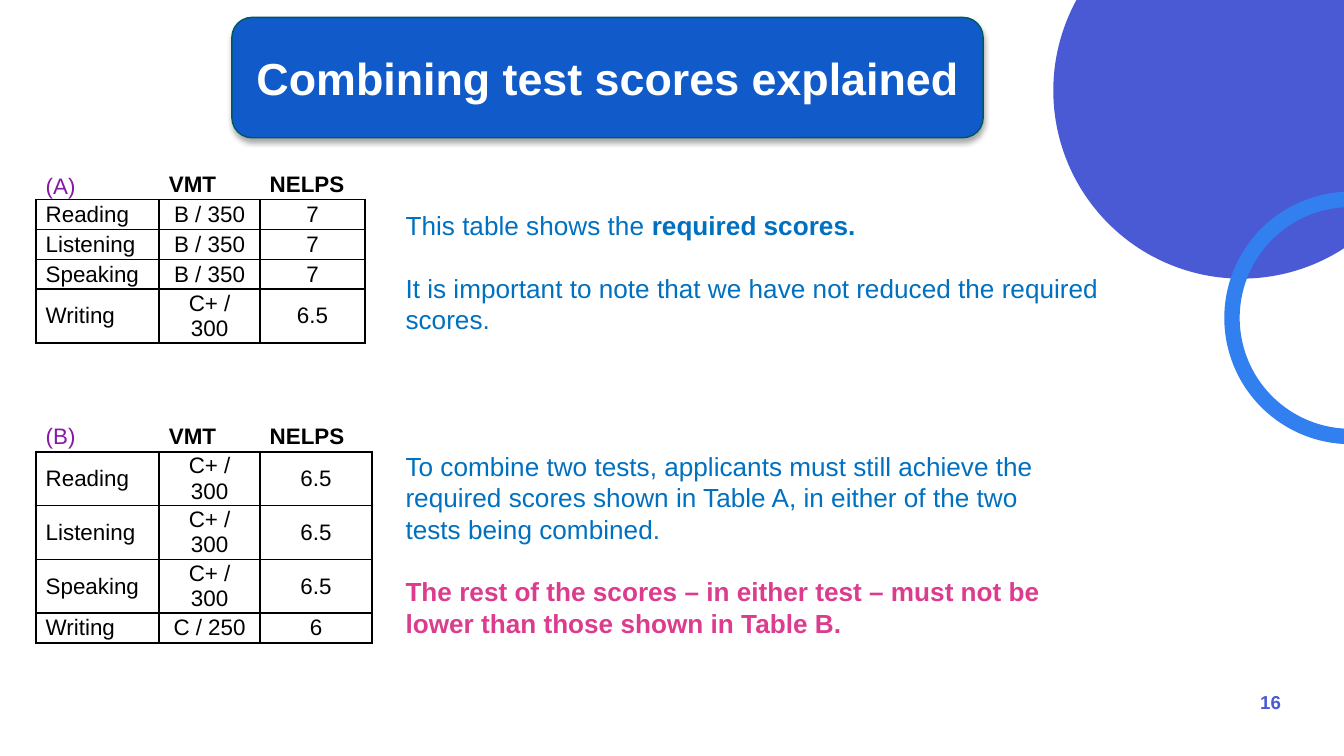
from lxml import etree
from pptx import Presentation
from pptx.dml.color import RGBColor
from pptx.enum.shapes import MSO_SHAPE
from pptx.enum.text import MSO_ANCHOR, PP_ALIGN
from pptx.oxml.ns import qn
from pptx.util import Pt

OVAL, ROUNDED = MSO_SHAPE.OVAL, MSO_SHAPE.ROUNDED_RECTANGLE
MIDDLE, BOTTOM = MSO_ANCHOR.MIDDLE, MSO_ANCHOR.BOTTOM
LEFT, CENTER, RIGHT = PP_ALIGN.LEFT, PP_ALIGN.CENTER, PP_ALIGN.RIGHT

COLORS = {
    "indigo": "495AD4", "azure": "327FEF", "banner": "105BC9", "teal": "00575F",
    "white": "FFFFFF", "black": "000000", "purple": "8917A6",
    "body": "0070C0", "pink": "DB3C8E",
}
FONT = "Arial"
BODY_SIZE = 14
PARAGRAPH_GAP = 16.9
ROW_HEIGHT, TALL_HEIGHT = 16, 28.8
LABEL_WIDTH, FIRST_TEST_WIDTH = 66, 54
EDGES = ("lnL", "lnR", "lnT", "lnB")


def color(name):
    return RGBColor.from_string(COLORS[name])


def points(box):
    return [Pt(length) for length in box]


def add_text(paragraph, text, size=BODY_SIZE, fill="black", bold=False, align=LEFT):
    paragraph.alignment = align
    run = paragraph.add_run()
    run.text = text
    run.font.name = FONT
    run.font.size = Pt(size)
    run.font.bold = bold
    run.font.color.rgb = color(fill)


def add_shape(slide, kind, box, fill=None, line=None, width=0):
    shape = slide.shapes.add_shape(kind, *points(box))
    shape.shadow.inherit = False
    if fill:
        shape.fill.solid()
        shape.fill.fore_color.rgb = color(fill)
    else:
        shape.fill.background()
    if line:
        shape.line.color.rgb = color(line)
        shape.line.width = Pt(width)
    else:
        shape.line.fill.background()
    return shape


def add_shadow(shape, blur, distance, opacity):
    effects = shape._element.spPr.find(qn("a:effectLst"))
    shadow = etree.SubElement(
        effects, qn("a:outerShdw"), blurRad=str(Pt(blur)), dist=str(Pt(distance)),
        dir="5400000", algn="ctr", rotWithShape="0")
    shade = etree.SubElement(shadow, qn("a:srgbClr"), val=COLORS["black"])
    etree.SubElement(shade, qn("a:alpha"), val=str(opacity * 1000))


def add_decoration(slide, box):
    left, top, diameter = box
    add_shape(slide, OVAL, (left, top, diameter, diameter), fill="indigo")
    ring = diameter * 0.63
    add_shape(slide, OVAL, (left + 95.7, top + 159.1, ring, ring),
              line="azure", width=8.25)


def add_slide_number(slide, box, number):
    text_box = slide.shapes.add_textbox(*points(box))
    text_box.text_frame.word_wrap = True
    paragraph = text_box.text_frame.paragraphs[0]
    paragraph.line_spacing = Pt(6)
    add_text(paragraph, number, size=10, fill="indigo", bold=True, align=RIGHT)


def add_banner(slide, box, title):
    banner = add_shape(slide, ROUNDED, box, fill="banner", line="teal", width=0.75)
    add_shadow(banner, blur=3.1, distance=1.8, opacity=35)
    frame = banner.text_frame
    frame.word_wrap = True
    frame.vertical_anchor = MIDDLE
    add_text(frame.paragraphs[0], title, size=24, fill="white", bold=True, align=CENTER)


def set_borders(cell, visible):
    properties = cell._tc.get_or_add_tcPr()
    for edge in EDGES:
        line = etree.SubElement(properties, qn(f"a:{edge}"), w=str(Pt(1)))
        if edge in visible:
            fill = etree.SubElement(line, qn("a:solidFill"))
            etree.SubElement(fill, qn("a:srgbClr"), val=COLORS["black"])
        else:
            etree.SubElement(line, qn("a:noFill"))


def add_score_table(slide, box, label, scores, label_anchor=MIDDLE):
    left, top, width = box
    rows = [(label, "VMT", "NELPS")] + scores
    heights = [TALL_HEIGHT if "+" in row[1] else ROW_HEIGHT for row in rows]
    frame = slide.shapes.add_table(
        len(rows), 3, *points((left, top, width, sum(heights))))
    table = frame.table
    table.first_row = table.horz_banding = False
    widths = (LABEL_WIDTH, FIRST_TEST_WIDTH, width - LABEL_WIDTH - FIRST_TEST_WIDTH)
    for column, column_width in zip(table.columns, widths):
        column.width = Pt(column_width)
    for row_index, values in enumerate(rows):
        table.rows[row_index].height = Pt(heights[row_index])
        header = row_index == 0
        for column_index, value in enumerate(values):
            cell = table.cell(row_index, column_index)
            corner = header and column_index == 0
            cell.margin_left = cell.margin_right = Pt(5.2)
            cell.margin_top = cell.margin_bottom = 0
            cell.vertical_anchor = label_anchor if corner else MIDDLE
            set_borders(cell, ("lnB",) if header else EDGES)
            cell.fill.background()
            add_text(cell.text_frame.paragraphs[0], value, size=12,
                     fill="purple" if corner else "black",
                     bold=header and not corner,
                     align=LEFT if header or column_index == 0 else CENTER)


def add_explanation(slide, box, paragraphs):
    text_box = slide.shapes.add_textbox(*points(box))
    frame = text_box.text_frame
    frame.word_wrap = True
    for index, runs in enumerate(paragraphs):
        paragraph = frame.add_paragraph() if index else frame.paragraphs[0]
        if index:
            paragraph.space_before = Pt(PARAGRAPH_GAP)
        for text, fill, bold in runs:
            add_text(paragraph, text, fill=fill, bold=bold)


def main():
    presentation = Presentation()
    presentation.slide_width, presentation.slide_height = Pt(720), Pt(405)
    slide = presentation.slides.add_slide(presentation.slide_layouts[6])

    add_decoration(slide, (564.3, -52.3, 201.6))
    add_slide_number(slide, (537, 372.7, 156.3, 10.8), "16")
    add_banner(slide, (124.2, 9.3, 402.5, 64.5), "Combining test scores explained")

    add_score_table(slide, (19.3, 91, 176.2), "(A)", [
        ("Reading", "B / 350", "7"),
        ("Listening", "B / 350", "7"),
        ("Speaking", "B / 350", "7"),
        ("Writing", "C+ / 300", "6.5"),
    ], label_anchor=BOTTOM)
    add_explanation(slide, (210.2, 108.7, 395.3, 74.9), [
        [("This table shows the ", "body", False), ("required scores.", "body", True)],
        [("It is important to note that we have not reduced the required scores.",
          "body", False)],
    ])

    add_score_table(slide, (19.3, 226, 180), "(B)", [
        ("Reading", "C+ / 300", "6.5"),
        ("Listening", "C+ / 300", "6.5"),
        ("Speaking", "C+ / 300", "6.5"),
        ("Writing", "C / 250", "6"),
    ])
    add_explanation(slide, (210.2, 237.6, 367.2, 108.7), [
        [("To combine two tests, applicants must still achieve the required scores "
          "shown in Table A, in either of the two tests being combined.",
          "body", False)],
        [("The rest of the scores – in either test – must not be lower than those "
          "shown in Table B.", "pink", True)],
    ])

    presentation.save("out.pptx")


if __name__ == "__main__":
    main()
